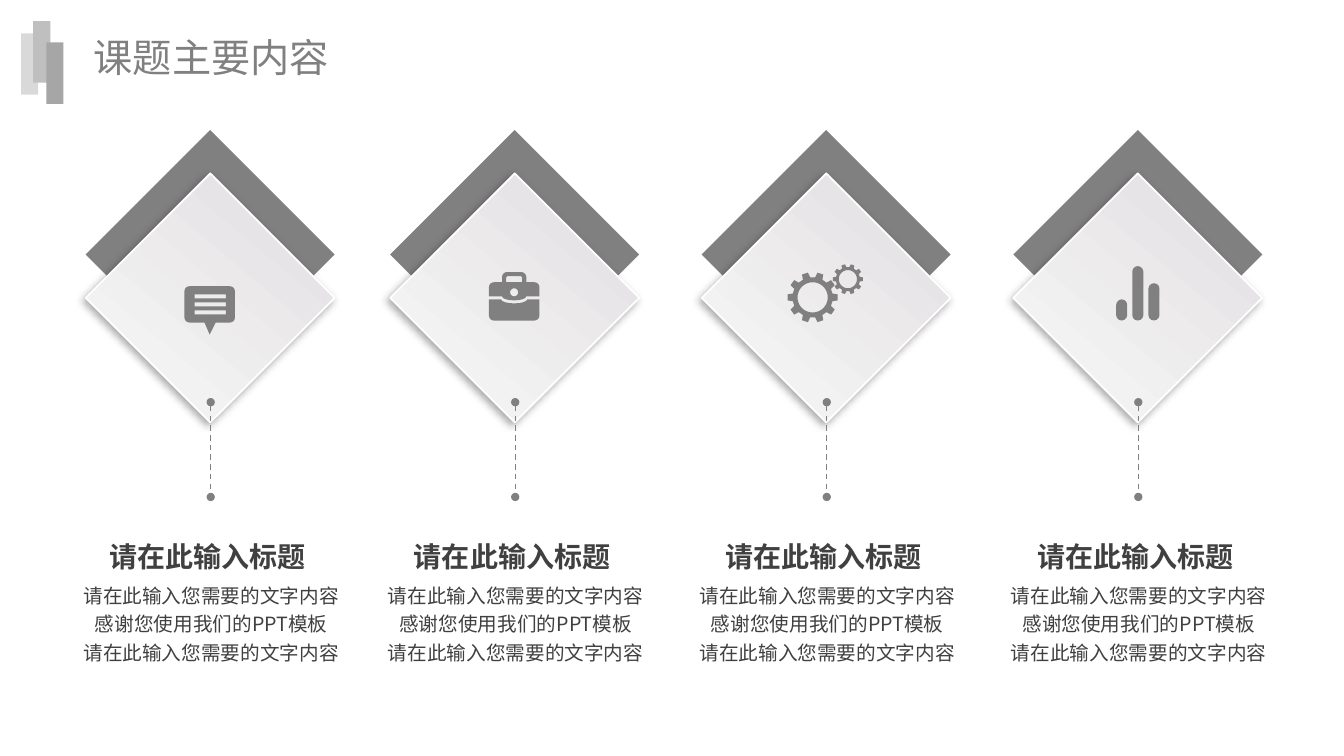
from dataclasses import dataclass
from math import cos, radians, sin

from lxml import etree
from pptx import Presentation
from pptx import util as u
from pptx.dml.color import RGBColor
from pptx.enum import dml, shapes, text
from pptx.oxml import ns

PX = 9144


@dataclass(frozen=True)
class Theme:
    font: str = "Noto Sans CJK SC"
    gray: str = "808080"
    ink: str = "404040"
    white: str = "FFFFFF"
    card: tuple = (("E2DDE1", 0), ("F2F2F2", 0.76))
    bars: tuple = ("D9D9D9", "BFBFBF", "A6A6A6")
    title_size: int = 28
    heading_size: int = 20
    body_size: int = 14


THEME = Theme()
PAGE_TITLE = "课题主要内容"
HEADING = "请在此输入标题"
BODY = ["请在此输入您需要的文字内容", "感谢您使用我们的PPT模板", "请在此输入您需要的文字内容"]


def px(*lengths):
    return [u.Emu(round(length * PX)) for length in lengths]


def add_child(parent, tag, **attributes):
    child = etree.SubElement(parent, ns.qn(tag))
    for name, value in attributes.items():
        child.set(name, str(value))
    return child


def fill_plain(shape, color):
    shape.shadow.inherit = False
    shape.fill.solid()
    shape.fill.fore_color.rgb = RGBColor.from_string(color)
    shape.line.fill.background()


def add_preset(slide, kind, box, color):
    shape = slide.shapes.add_shape(kind, *px(*box))
    fill_plain(shape, color)
    return shape


def format_run(run, size, color, bold=False):
    run.font.size = u.Pt(size)
    run.font.bold = bold
    run.font.color.rgb = RGBColor.from_string(color)
    run.font.name = THEME.font
    add_child(run.font._element, "a:ea", typeface=THEME.font)


def add_text(slide, box, lines, size, bold=False, spacing=1.0):
    frame = slide.shapes.add_textbox(*px(*box)).text_frame
    frame.word_wrap = True
    frame.text = "\n".join(lines)
    for paragraph in frame.paragraphs:
        paragraph.alignment = text.PP_ALIGN.CENTER
        paragraph.line_spacing = spacing
        format_run(paragraph.runs[0], size, THEME.ink, bold)


def arc(x, y, radius, start, end, steps=8, radius_y=None):
    tall = radius if radius_y is None else radius_y
    angles = [radians(start + (end - start) * i / steps) for i in range(steps + 1)]
    return [(x + radius * cos(a), y + tall * sin(a)) for a in angles]


def rounded(left, top, right, bottom, radius):
    return (top_corners(left, top, right, radius)
            + bottom_corners(left, right, bottom, radius))


def top_corners(left, top, right, radius):
    return (arc(left + radius, top + radius, radius, 180, 270)
            + arc(right - radius, top + radius, radius, 270, 360))


def bottom_corners(left, right, bottom, radius):
    return (arc(right - radius, bottom - radius, radius, 0, 90)
            + arc(left + radius, bottom - radius, radius, 90, 180))


def add_outline(slide, x, y, *contours):
    placed = [[px(x + dx, y + dy) for dx, dy in contour] for contour in contours]
    builder = slide.shapes.build_freeform(*placed[0][0], scale=1.0)
    builder.add_line_segments(placed[0][1:])
    for contour in placed[1:]:
        builder.move_to(*contour[0])
        builder.add_line_segments(contour[1:])
    fill_plain(builder.convert_to_shape(), THEME.gray)


def add_message_icon(slide, x, y):
    rows = [rounded(-15, top, 16, top + 4, 0) for top in (-4, 4, 12)]
    add_outline(slide, x, y, rounded(-25, -12, 25, 24, 5), *rows)
    add_outline(slide, x, y, [(-6, 22), (7, 22), (0, 36)])


def add_briefcase_icon(slide, x, y):
    lid = (top_corners(-25, -16, 25, 5) + [(25, -2)]
           + arc(0, -2, 12, 0, 180, radius_y=4) + [(-25, -2)])
    handle = (top_corners(-12, -26, 12, 5) + [(12, -16), (8, -16)]
              + top_corners(-8, -22, 8, 2)[::-1] + [(-8, -16), (-12, -16)])
    base = ([(-25, 1)] + arc(0, 1, 13, 180, 0, radius_y=4)
            + [(25, 1)] + bottom_corners(-25, 25, 22, 5))
    add_outline(slide, x, y, lid, arc(0, -6, 4, 0, 360, 24))
    add_outline(slide, x, y, handle)
    add_outline(slide, x, y, base)


def add_gears_icon(slide, x, y):
    for dx, dy, outer, root, hole in ((-13, -1, 25, 20, 15), (22, -19, 15, 12, 9)):
        tooth = ((root, -11), (outer, -7), (outer, 7), (root, 11))
        teeth = [(radius * cos(radians(turn + angle)), radius * sin(radians(turn + angle)))
                 for turn in range(0, 360, 36) for radius, angle in tooth]
        add_outline(slide, x + dx, y + dy, teeth, arc(0, 0, hole, 0, 360, 40))


def add_bars_icon(slide, x, y):
    for dx, top in ((-21, 1), (-5, -32), (11, -15)):
        bar = add_preset(slide, shapes.MSO_SHAPE.ROUNDED_RECTANGLE,
                         (x + dx, y + top, 11, 22 - top), THEME.gray)
        bar.adjustments[0] = 0.5


def add_card(slide, left, top, size):
    diamond = shapes.MSO_SHAPE.DIAMOND
    add_preset(slide, diamond, (left, top, size, size), THEME.gray)
    card = add_preset(slide, diamond, (left, top + 43, size, size), THEME.white)
    card.fill.gradient()
    card.fill.gradient_angle = 230
    for stop, (color, position) in zip(card.fill.gradient_stops, THEME.card):
        stop.color.rgb = RGBColor.from_string(color)
        stop.position = position
    card.line.color.rgb = RGBColor.from_string(THEME.white)
    card.line.width = u.Pt(1.25)
    effects = card._element.spPr.find(ns.qn("a:effectLst"))
    shadow = add_child(effects, "a:outerShdw", blurRad=u.Pt(6), dist=u.Pt(3),
                       dir=135 * 60000, algn="tr", rotWithShape=0)
    add_child(add_child(shadow, "a:srgbClr", val="000000"), "a:alpha", val=32000)


def add_stem(slide, x, top, bottom):
    stem = slide.shapes.add_connector(shapes.MSO_CONNECTOR.STRAIGHT, *px(x, top, x, bottom))
    stem.line.color.rgb = RGBColor.from_string(THEME.gray)
    stem.line.width = u.Pt(1)
    stem.line.dash_style = dml.MSO_LINE.DASH
    line = stem.line._get_or_add_ln()
    add_child(line, "a:headEnd", type="oval")
    add_child(line, "a:tailEnd", type="oval")
    add_child(stem._element.spPr, "a:effectLst")


def add_column(slide, left, top, size, add_icon):
    center = left + size // 2
    add_card(slide, left, top, size)
    add_icon(slide, center, top + 167)
    add_stem(slide, center + 1, top + 270, top + 364)
    add_text(slide, (center - 112, top + 401, 220, 44), [HEADING],
             THEME.heading_size, bold=True)
    add_text(slide, (center - 165, top + 441, 333, 93), BODY,
             THEME.body_size, spacing=1.2)


def add_header(slide, left, top):
    for (dx, dy), color in zip(((0, 12), (12, 0), (25, 21)), THEME.bars):
        add_preset(slide, shapes.MSO_SHAPE.RECTANGLE,
                   (left + dx, top + dy, 17, 61), color)
    title = slide.shapes.title
    title.left, title.top, title.width, title.height = px(left + 62, top + 7, 256, 57)
    frame = title.text_frame
    frame.text = PAGE_TITLE
    frame.word_wrap = False
    frame.auto_size = text.MSO_AUTO_SIZE.NONE
    frame.vertical_anchor = text.MSO_ANCHOR.MIDDLE
    paragraph = frame.paragraphs[0]
    paragraph.alignment = text.PP_ALIGN.LEFT
    format_run(paragraph.runs[0], THEME.title_size, THEME.gray)


def main():
    presentation = Presentation()
    presentation.slide_width, presentation.slide_height = u.Inches(13.33), u.Inches(7.5)
    slide = presentation.slides.add_slide(presentation.slide_layouts[5])
    add_header(slide, 21, 21)
    columns = ((85, add_message_icon), (387, add_briefcase_icon),
               (696, add_gears_icon), (1005, add_bars_icon))
    for left, add_icon in columns:
        add_column(slide, left, 129, 247, add_icon)
    presentation.save("out.pptx")


if __name__ == "__main__":
    main()
